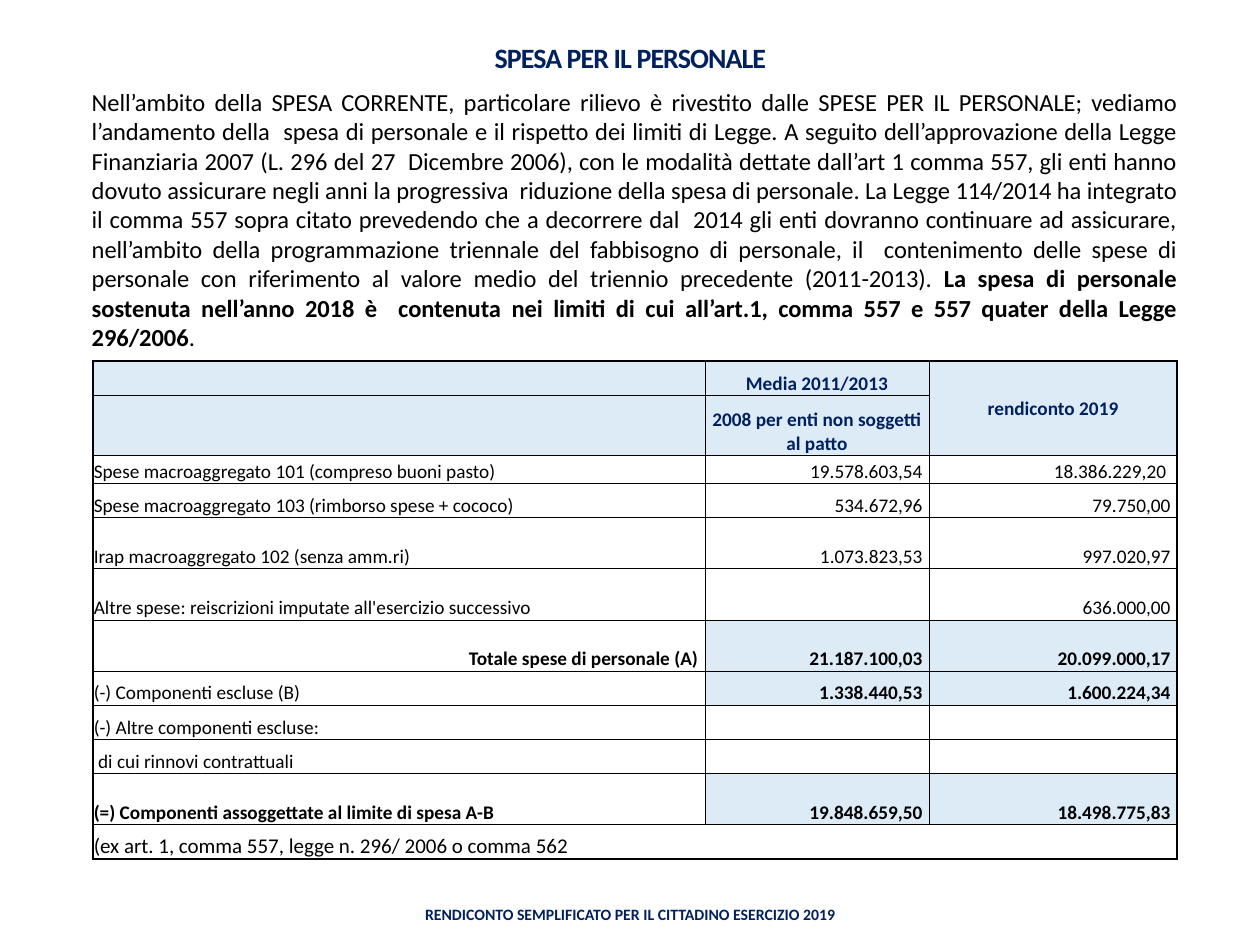
from typing import NamedTuple

from lxml.etree import SubElement
from pptx import Presentation
from pptx.dml.color import RGBColor
from pptx.enum.text import MSO_ANCHOR, PP_ALIGN
from pptx.oxml.ns import qn
from pptx.util import Cm, Pt

COLORS = {"navy": "002060", "black": "000000", "pale": "DDEBF7"}
FONT = "Calibri"
THICK, THIN = 1, 0.5


class Run(NamedTuple):
    text: str
    size: float
    color: str = "black"
    bold: bool = False
    spacing: float = 0


class Box(NamedTuple):
    left: float
    top: float
    width: float
    height: float
    align: PP_ALIGN
    anchor: MSO_ANCHOR
    runs: list[Run]
    line_spacing: float = 1.0
    before: float = 0


class Row(NamedTuple):
    height: float
    label: str
    average: str = ""
    report: str = ""
    bold_label: bool = False
    total: bool = False
    label_align: PP_ALIGN = PP_ALIGN.LEFT
    label_size: float = 11


BOXES = [
    Box(1.85, 1.75, 21.87, 5.41, PP_ALIGN.JUSTIFY, MSO_ANCHOR.TOP, [
        Run("Nell’ambito della SPESA CORRENTE, particolare rilievo è rivestito dalle SPESE PER IL "
            "PERSONALE; vediamo l’andamento della  spesa di personale e il rispetto dei limiti di "
            "Legge. A seguito dell’approvazione della Legge Finanziaria 2007 (L. 296 del 27  "
            "Dicembre 2006), con le modalità dettate dall’art 1 comma 557, gli enti hanno dovuto "
            "assicurare negli anni la progressiva  riduzione della spesa di personale. La Legge "
            "114/2014 ha integrato il comma 557 sopra citato prevedendo che a decorrere dal  2014 "
            "gli enti dovranno continuare ad assicurare, nell’ambito della programmazione "
            "triennale del fabbisogno di personale, il  contenimento delle spese di personale con "
            "riferimento al valore medio del triennio precedente (2011-2013). ", 14, spacing=-0.05),
        Run("La spesa di personale sostenuta nell’anno 2018 è  contenuta nei limiti di cui "
            "all’art.1, comma 557 e 557 quater della Legge 296/2006", 14, bold=True, spacing=-0.05),
        Run(".", 14),
    ], before=1),
    Box(6.83, 0.74, 11.76, 0.76, PP_ALIGN.CENTER, MSO_ANCHOR.BOTTOM,
        [Run("SPESA PER IL PERSONALE", 16, "navy", True, -0.5)], 0.85),
    Box(7.67, 17.93, 10.06, 1.02, PP_ALIGN.CENTER, MSO_ANCHOR.MIDDLE,
        [Run("RENDICONTO SEMPLIFICATO PER IL CITTADINO ESERCIZIO 2019", 9, "navy", True)]),
]

COLUMNS = [12.34, 4.52, 5.0]
SHORT, TALL = 0.69, 1.03
HEADER = [
    Row(SHORT, "", "Media 2011/2013", "rendiconto 2019"),
    Row(1.21, "", "2008 per enti non soggetti al patto"),
]
BODY = [
    Row(0.57, "Spese macroaggregato 101 (compreso buoni pasto)", "19.578.603,54", "18.386.229,20 "),
    Row(SHORT, "Spese macroaggregato 103 (rimborso spese + cococo)", "534.672,96", "79.750,00"),
    Row(TALL, "Irap macroaggregato 102 (senza amm.ri)", "1.073.823,53", "997.020,97"),
    Row(TALL, "Altre spese: reiscrizioni imputate all'esercizio successivo", "", "636.000,00"),
    Row(TALL, "Totale spese di personale (A)", "21.187.100,03", "20.099.000,17",
        True, True, PP_ALIGN.RIGHT),
    Row(SHORT, "(-) Componenti escluse (B)", "1.338.440,53", "1.600.224,34", total=True),
    Row(SHORT, "(-) Altre componenti escluse:"),
    Row(SHORT, " di cui rinnovi contrattuali"),
    Row(TALL, "(=) Componenti assoggettate al limite di spesa A-B", "19.848.659,50",
        "18.498.775,83", True, True),
    Row(SHORT, "(ex art. 1, comma 557, legge n. 296/ 2006 o comma 562", label_size=12),
]


def rgb(name: str) -> RGBColor:
    return RGBColor.from_string(COLORS[name])


def add_run(p, run: Run) -> None:
    r = p.add_run()
    r.text = run.text
    f = r.font
    f.name, f.size, f.bold = FONT, Pt(run.size), run.bold
    f.color.rgb = rgb(run.color)
    if run.spacing:
        r._r.get_or_add_rPr().set("spc", str(round(run.spacing * 100)))


def add_box(s, box: Box) -> None:
    sp = s.shapes.add_textbox(Cm(box.left), Cm(box.top), Cm(box.width), Cm(box.height))
    tf = sp.text_frame
    tf.word_wrap = True
    tf.margin_left = tf.margin_right = tf.margin_top = tf.margin_bottom = 0
    tf.vertical_anchor = box.anchor
    p = tf.paragraphs[0]
    p.alignment, p.line_spacing, p.space_before = box.align, box.line_spacing, Pt(box.before)
    for run in box.runs:
        add_run(p, run)


def set_borders(cell, widths: dict[str, float]) -> None:
    tc_pr = cell._tc.get_or_add_tcPr()
    for side in ("L", "R", "T", "B"):
        ln = SubElement(tc_pr, qn(f"a:ln{side}"), w=str(Pt(widths[side])))
        if widths[side]:
            fill = SubElement(ln, qn("a:solidFill"))
            SubElement(fill, qn("a:srgbClr"), val=COLORS["black"])
        else:
            SubElement(ln, qn("a:noFill"))


def fill_cell(cell, run: Run, align: PP_ALIGN, anchor: MSO_ANCHOR, shaded: bool) -> None:
    cell.margin_left = cell.margin_top = Cm(0.02)
    cell.margin_right = Cm(0.13 if align == PP_ALIGN.RIGHT else 0.02)
    cell.margin_bottom = 0
    cell.vertical_anchor = anchor
    if shaded:
        cell.fill.solid()
        cell.fill.fore_color.rgb = rgb("pale")
    else:
        cell.fill.background()
    p = cell.text_frame.paragraphs[0]
    p.alignment = align
    if run.text:
        add_run(p, run)
    else:
        p._p.get_or_add_endParaRPr().set("sz", str(round(run.size * 100)))


def add_spending_table(s) -> None:
    rows = HEADER + BODY
    last_row, last_col = len(rows) - 1, len(COLUMNS) - 1
    frame = s.shapes.add_table(len(rows), len(COLUMNS), Cm(1.87), Cm(7.28),
                               Cm(sum(COLUMNS)), Cm(sum(row.height for row in rows)))
    table = frame.table
    table.first_row = table.horz_banding = False
    for col, width in zip(table.columns, COLUMNS):
        col.width = Cm(width)
    for i, row in enumerate(rows):
        table.rows[i].height = Cm(row.height)
        header = i < len(HEADER)
        inner = 0 if i == last_row else THIN
        for j, text in enumerate((row.label, row.average, row.report)):
            cell = table.cell(i, j)
            set_borders(cell, {
                "L": THICK if j == 0 else inner,
                "R": THICK if j == last_col else inner,
                "T": THICK if i == 0 else THIN,
                "B": THICK if i == last_row else THIN,
            })
            bold = header or (row.bold_label if j == 0 else row.total)
            size = row.label_size if j == 0 else 11
            align = row.label_align if j == 0 else PP_ALIGN.RIGHT
            anchor = MSO_ANCHOR.MIDDLE if header and j == last_col else MSO_ANCHOR.BOTTOM
            fill_cell(cell, Run(text, size, "navy" if header else "black", bold),
                      PP_ALIGN.CENTER if header else align, anchor,
                      header or (row.total and j > 0))
    table.cell(0, last_col).merge(table.cell(1, last_col))


def main() -> None:
    """Build the personnel spending slide."""
    prs = Presentation()
    prs.slide_width, prs.slide_height = Cm(25.4), Cm(19.05)
    s = prs.slides.add_slide(prs.slide_layouts[6])
    for box in BOXES:
        add_box(s, box)
    add_spending_table(s)
    prs.save("out.pptx")


if __name__ == "__main__":
    main()
